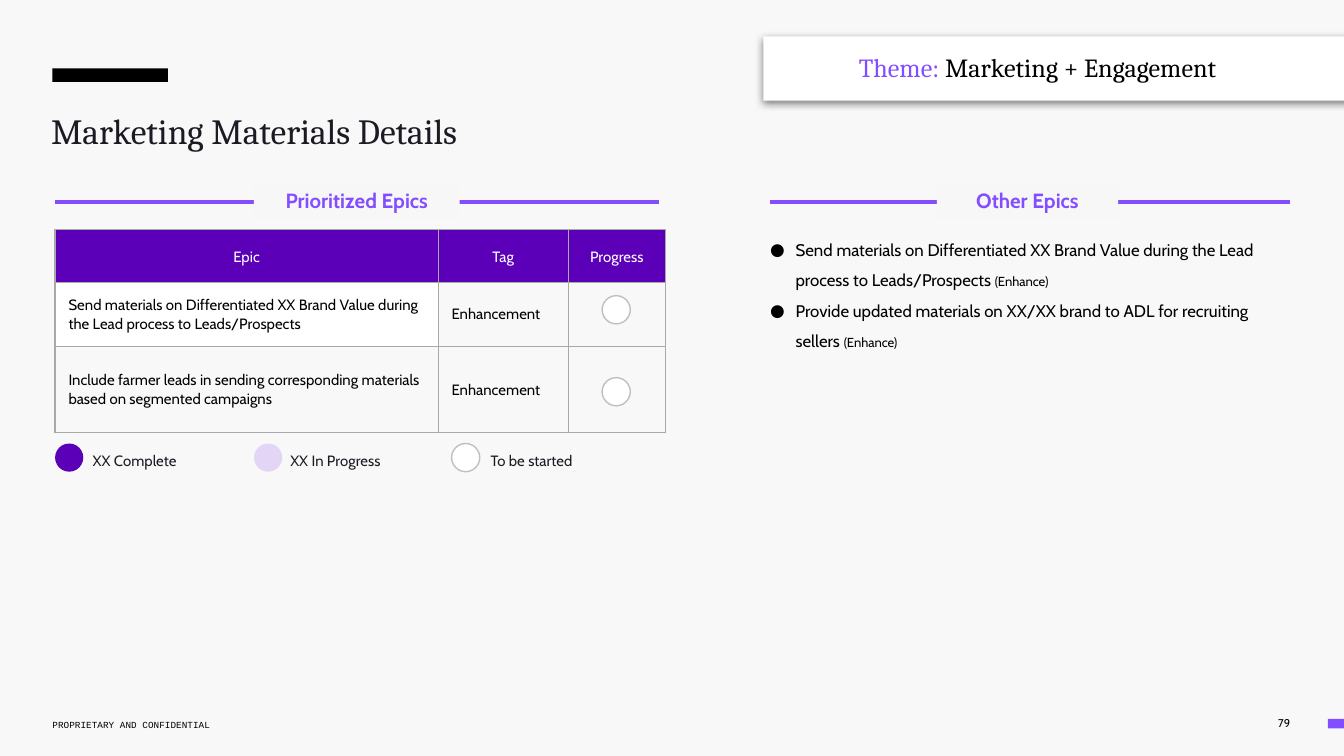
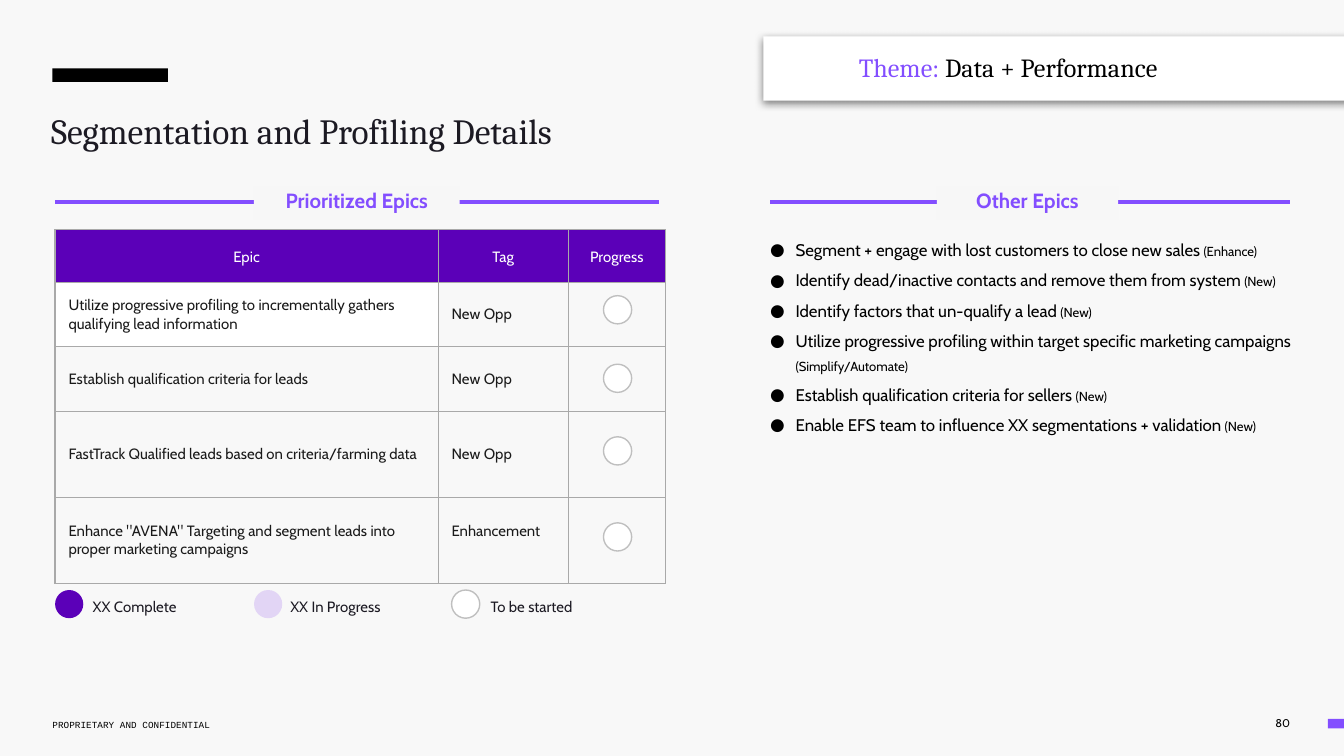
import pptx
import pptx.dml.color
import pptx.enum.shapes
import pptx.enum.text
import pptx.oxml
import pptx.oxml.ns
import pptx.util
import lxml.etree

Inches = pptx.util.Inches
Pt = pptx.util.Pt
SHAPE = pptx.enum.shapes.MSO_SHAPE
ALIGN = pptx.enum.text.PP_ALIGN
ANCHOR = pptx.enum.text.MSO_ANCHOR

BACKGROUND, LABEL_FILL = "F8F8F8", "F7F7F7"
PURPLE, DEEP_PURPLE, PALE_PURPLE = "834EFF", "5B00B8", "E2D5F5"
BLACK, WHITE, INK = "000000", "FFFFFF", "1C1A23"
TABLE_BORDER, CIRCLE_LINE = "A9A9A9", "BFBFBF"
SANS, SERIF, MONO = "Cabin", "Cambria", "Courier New"

CIRCLE = 0.21
TABLE_LEFT, TABLE_TOP = 0.41, 1.71
COLUMN_WIDTHS = (2.85, 0.97, 0.72)
HEADER_HEIGHT = 0.39
CELL_INSET = 0.1
HEADERS = ("Epic", "Tag", "Progress")
FOOTER = "PROPRIETARY AND CONFIDENTIAL"

# label, rule left, rule right, label left, label width
SECTIONS = [
    ("Other Epics", 5.73, 9.6, 6.97, 1.35),
    ("Prioritized Epics", 0.41, 4.9, 1.89, 1.53),
]
# label, circle left, text left, text width, circle fill, circle line
LEGEND = [
    ("XX Complete", 0.41, 0.65, 1.36, DEEP_PURPLE, None),
    ("XX In Progress", 1.89, 2.12, 1.66, PALE_PURPLE, None),
    ("To be started", 3.36, 3.61, 1.66, WHITE, CIRCLE_LINE),
]
# epics: text, tag, row height, top of the progress circle, bottom inset of the tag
SLIDES = [
    {
        "title": "Marketing Materials Details",
        "theme": "Marketing + Engagement",
        "page": "79",
        "cell_color": BLACK,
        "circle_left": 4.48,
        "legend_top": 3.3,
        "epics": [
            ("Send materials on Differentiated XX Brand Value during the Lead process "
             "to Leads/Prospects", "Enhancement", 0.48, 2.2, CELL_INSET),
            ("Include farmer leads in sending corresponding materials based on "
             "segmented campaigns", "Enhancement", 0.64, 2.81, CELL_INSET),
        ],
        "others": [
            ("Send materials on Differentiated XX Brand Value during the Lead process "
             "to Leads/Prospects", "Enhance"),
            ("Provide updated materials on XX/XX brand to ADL for recruiting sellers",
             "Enhance"),
        ],
    },
    {
        "title": "Segmentation and Profiling Details",
        "theme": "Data + Performance",
        "page": "80",
        "cell_color": "1A1A1A",
        "circle_left": 4.49,
        "legend_top": 4.39,
        "epics": [
            ("Utilize progressive profiling to incrementally gathers qualifying lead "
             "information", "New Opp", 0.48, 2.2, CELL_INSET),
            ("Establish qualification criteria for leads",
             "New Opp", 0.48, 2.71, CELL_INSET),
            ("FastTrack Qualified leads based on criteria/farming data",
             "New Opp", 0.64, 3.25, CELL_INSET),
            ("Enhance \"AVENA\" Targeting and segment leads into proper marketing "
             "campaigns", "Enhancement", 0.64, 3.89, 0.23),
        ],
        "others": [
            ("Segment + engage with lost customers to close new sales", "Enhance"),
            ("Identify dead/inactive contacts and remove them from system", "New"),
            ("Identify factors that un-qualify a lead", "New"),
            ("Utilize progressive profiling within target specific marketing campaigns",
             "Simplify/Automate"),
            ("Establish qualification criteria for sellers", "New"),
            ("Enable EFS team to influence XX segmentations + validation", "New"),
        ],
    },
]


def rgb(color):
    return pptx.dml.color.RGBColor.from_string(color)


def add_xml(parent, tag, **attributes):
    child = lxml.etree.SubElement(parent, pptx.oxml.ns.qn(tag))
    for name, value in attributes.items():
        child.set(name, str(value))
    return child


def add_bullet(paragraph):
    properties = paragraph._p.get_or_add_pPr()
    properties.set("marL", str(Inches(0.24)))
    properties.set("indent", str(Inches(-0.19)))
    add_xml(add_xml(properties, "a:buClr"), "a:srgbClr", val=BLACK)
    add_xml(properties, "a:buSzPts", val=900)
    add_xml(properties, "a:buFont", typeface=SANS)
    add_xml(properties, "a:buChar", char="●")


def write(frame, paragraphs, size=8, font=SANS, color=INK, bold=False, align=ALIGN.LEFT,
          spacing=1.0, anchor=ANCHOR.TOP, insets=(0, 0, 0, 0), bullets=False):
    """Fill a frame; each paragraph is a string or a list of (text, size, color) runs."""
    frame.word_wrap = True
    frame.auto_size = pptx.enum.text.MSO_AUTO_SIZE.NONE
    frame.vertical_anchor = anchor
    (frame.margin_left, frame.margin_top,
     frame.margin_right, frame.margin_bottom) = map(Inches, insets)
    for index, content in enumerate(paragraphs):
        paragraph = frame.add_paragraph() if index else frame.paragraphs[0]
        if bullets:
            add_bullet(paragraph)
        paragraph.alignment = align
        paragraph.line_spacing = spacing
        runs = [(content, size, color)] if isinstance(content, str) else content
        for text, run_size, run_color in runs:
            run = paragraph.add_run()
            run.text = text
            run.font.name = font
            run.font.size = Pt(run_size)
            run.font.bold = bold
            run.font.color.rgb = rgb(run_color)


def add_text(slide, box, paragraphs, **text_format):
    shape = slide.shapes.add_textbox(*map(Inches, box))
    write(shape.text_frame, paragraphs, **text_format)


def add_shape(slide, kind, box, fill, line=None):
    shape = slide.shapes.add_shape(kind, *map(Inches, box))
    shape.shadow.inherit = False
    shape.fill.solid()
    shape.fill.fore_color.rgb = rgb(fill)
    if line:
        shape.line.color.rgb = rgb(line)
        shape.line.width = Pt(0.75)
    else:
        shape.line.fill.background()
    return shape


def add_circle(slide, left, top, fill, line):
    add_shape(slide, SHAPE.OVAL, (left, top, CIRCLE, CIRCLE), fill, line)


def add_frame(slide, title, page):
    """Title, logo block and footer."""
    add_shape(slide, SHAPE.RECTANGLE, (0.39, 0.51, 0.86, 0.1), BLACK)
    add_text(slide, (8.85, 5.29, 0.82, 0.18), [page], size=6, color=BLACK,
             align=ALIGN.RIGHT, anchor=ANCHOR.MIDDLE, insets=(0.07, 0.04, 0.07, 0.04))
    add_shape(slide, SHAPE.RECTANGLE, (9.88, 5.35, 0.13, 0.07), PURPLE)
    add_text(slide, (0.39, 5.31, 2.18, 0.15), [FOOTER], size=5, font=MONO,
             color=BLACK, spacing=1.15, anchor=ANCHOR.MIDDLE)
    placeholder = slide.shapes.title
    placeholder.left, placeholder.top = Inches(0.38), Inches(0.72)
    placeholder.width, placeholder.height = Inches(5.52), Inches(0.64)
    write(placeholder.text_frame, [title], size=19, font=SERIF, spacing=0.8,
          insets=(0, 0.15, 0, 0))


def add_theme(slide, theme):
    banner = add_shape(slide, SHAPE.RECTANGLE, (5.68, 0.27, 4.53, 0.48), WHITE)
    effects = banner._element.spPr.find(pptx.oxml.ns.qn("a:effectLst"))
    shadow = add_xml(effects, "a:outerShdw", blurRad=Pt(4.5), dist=Pt(1.5),
                     dir=90 * 60000, algn="bl", rotWithShape=0)
    add_xml(add_xml(shadow, "a:srgbClr", val=BLACK), "a:alpha", val=50000)
    add_text(slide, (6.12, 0.28, 3.88, 0.44),
             [[("Theme:", 14, PURPLE), (" " + theme, 14, BLACK)]],
             font=SERIF, insets=(0.27, 0.1, 0.1, 0.1))


def add_section(slide, label, rule_left, rule_right, label_left, label_width):
    rule = slide.shapes.add_connector(
        pptx.enum.shapes.MSO_CONNECTOR.STRAIGHT,
        Inches(rule_left), Inches(1.5), Inches(rule_right), Inches(1.5))
    rule.line.color.rgb = rgb(PURPLE)
    rule.line.width = Pt(2.25)
    add_xml(rule._element.spPr, "a:effectLst")
    box = add_shape(slide, SHAPE.RECTANGLE, (label_left, 1.39, label_width, 0.24),
                    LABEL_FILL)
    write(box.text_frame, [label], size=11, color=PURPLE, bold=True,
          align=ALIGN.CENTER, spacing=1.04)


def format_cell(cell, text, fill, bottom=CELL_INSET, **text_format):
    properties = cell._tc.get_or_add_tcPr()
    for side in ("a:lnL", "a:lnR", "a:lnT", "a:lnB"):
        border = add_xml(properties, side, w=Pt(0.75))
        add_xml(add_xml(border, "a:solidFill"), "a:srgbClr", val=TABLE_BORDER)
    if fill:
        cell.fill.solid()
        cell.fill.fore_color.rgb = rgb(fill)
    else:
        cell.fill.background()
    cell.vertical_anchor = ANCHOR.MIDDLE
    cell.margin_left = cell.margin_right = cell.margin_top = Inches(CELL_INSET)
    cell.margin_bottom = Inches(bottom)
    if text:
        write(cell.text_frame, [text], anchor=ANCHOR.MIDDLE,
              insets=(CELL_INSET, CELL_INSET, CELL_INSET, bottom), **text_format)
    else:
        cell.text_frame.paragraphs[0].font.size = Pt(8)


def add_epics(slide, epics, color, circle_left):
    heights = [HEADER_HEIGHT] + [epic[2] for epic in epics]
    table = slide.shapes.add_table(
        len(heights), len(HEADERS), Inches(TABLE_LEFT), Inches(TABLE_TOP),
        Inches(sum(COLUMN_WIDTHS)), Inches(sum(heights))).table
    table.first_row = table.horz_banding = False
    for column, width in zip(table.columns, COLUMN_WIDTHS):
        column.width = Inches(width)
    for row, height in zip(table.rows, heights):
        row.height = Inches(height)
    for column, header in enumerate(HEADERS):
        format_cell(table.cell(0, column), header, DEEP_PURPLE, color=WHITE,
                    align=ALIGN.CENTER, spacing=1.15)
    for row, (epic, tag, _, circle_top, tag_bottom) in enumerate(epics, start=1):
        epic_fill = WHITE if row == 1 else None
        format_cell(table.cell(row, 0), epic, epic_fill, color=color)
        format_cell(table.cell(row, 1), tag, None, bottom=tag_bottom, color=color)
        format_cell(table.cell(row, 2), "", None)
        add_circle(slide, circle_left, circle_top, WHITE, CIRCLE_LINE)


def add_legend(slide, top):
    for label, circle_left, text_left, text_width, fill, line in LEGEND:
        add_circle(slide, circle_left, top, fill, line)
        add_text(slide, (text_left, top, text_width, CIRCLE), [label], spacing=1.15,
                 insets=(0.04, 0.04, 0.04, 0.04))


def main():
    presentation = pptx.Presentation()
    presentation.slide_width = Inches(10)
    presentation.slide_height = presentation.slide_width * 9 // 16
    background = presentation.slide_master.background.fill
    background.solid()
    background.fore_color.rgb = rgb(BACKGROUND)
    for content in SLIDES:
        slide = presentation.slides.add_slide(presentation.slide_layouts[5])
        add_frame(slide, content["title"], content["page"])
        add_theme(slide, content["theme"])
        for section in SECTIONS:
            add_section(slide, *section)
        add_epics(slide, content["epics"], content["cell_color"], content["circle_left"])
        add_legend(slide, content["legend_top"])
        others = [[(f"{epic} ", 9, BLACK), (f"({tag})", 7, BLACK)]
                  for epic, tag in content["others"]]
        add_text(slide, (5.68, 1.71, 3.94, 3.03), others, spacing=1.5, bullets=True)
    presentation.save("out.pptx")


if __name__ == "__main__":
    main()
